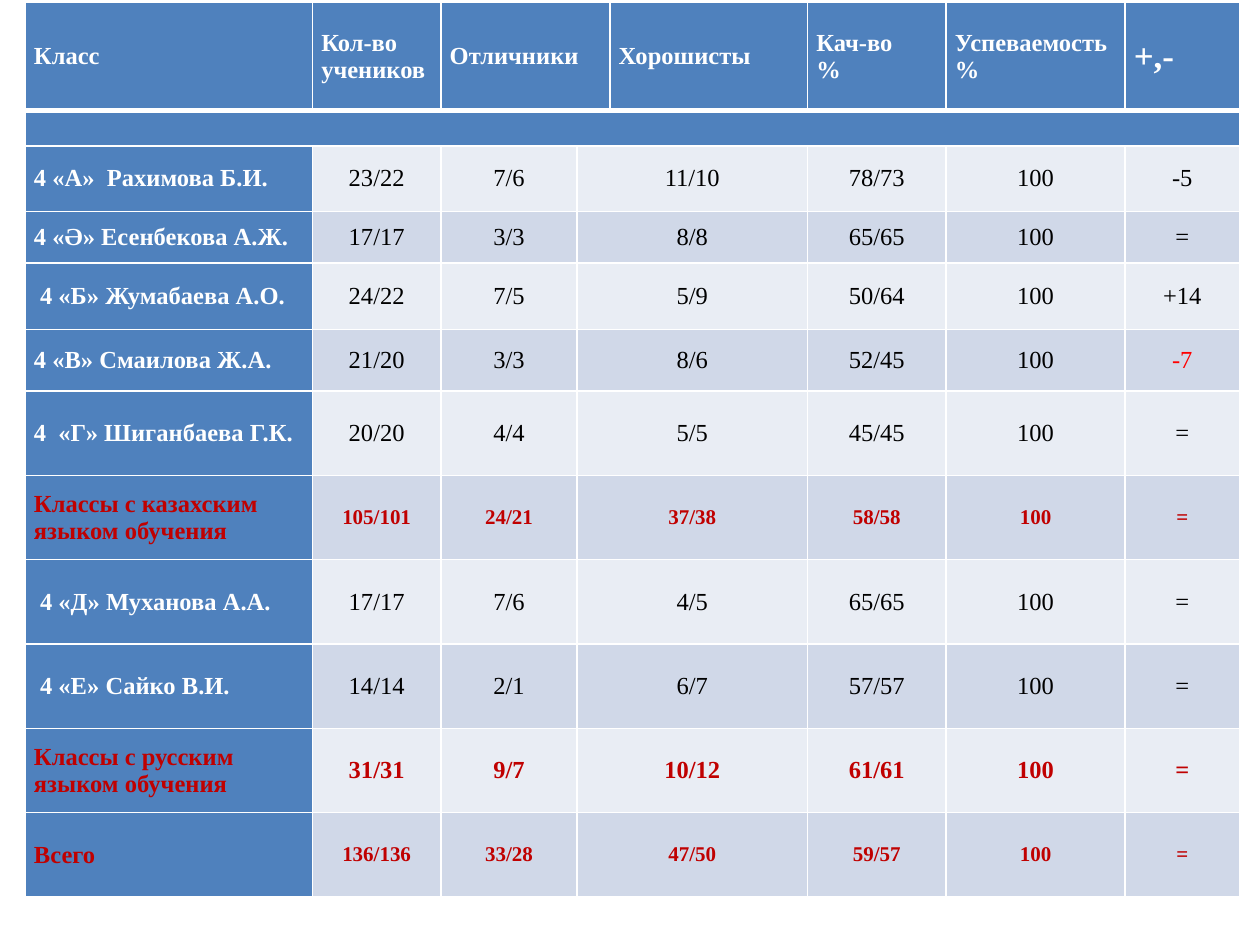
from lxml import etree
from pptx import Presentation
from pptx.dml.color import RGBColor
from pptx.enum.text import MSO_ANCHOR, PP_ALIGN
from pptx.oxml.ns import qn
from pptx.util import Inches, Pt

MIDDLE = MSO_ANCHOR.MIDDLE
LEFT, CENTER = PP_ALIGN.LEFT, PP_ALIGN.CENTER
WHITE = RGBColor(0xFF, 0xFF, 0xFF)
BLACK = RGBColor(0, 0, 0)
BLUE = RGBColor(0x4F, 0x81, 0xBD)
LIGHT = RGBColor(0xE9, 0xED, 0xF4)
DARK = RGBColor(0xD0, 0xD8, 0xE8)
CRIMSON = RGBColor(0xC0, 0, 0)
RED = RGBColor(0xFF, 0, 0)
FONT = "Times New Roman"

COLS = [2.28, 1.02, 1.08, 0.26, 1.57, 1.1, 1.42, 0.91]
ROWS = [0.86, 0.28, 0.52, 0.41, 0.53, 0.49] + [0.67] * 6
HEAD = ["Класс", "Кол-во учеников", "Отличники", "Хорошисты",
        "Кач-во\n%", "Успеваемость\n%", "+,-"]
HEAD_AT = [0, 1, 2, 4, 5, 6, 7]
BODY_AT = [0, 1, 2, 3, 5, 6, 7]
BODY = [
    ["4 «А»  Рахимова Б.И.", "23/22", "7/6", "11/10", "78/73", "100", "-5"],
    ["4 «Ә» Есенбекова А.Ж.", "17/17", "3/3", "8/8", "65/65", "100", "="],
    [" 4 «Б» Жумабаева А.О.", "24/22", "7/5", "5/9", "50/64", "100", "+14"],
    ["4 «В» Смаилова Ж.А.", "21/20", "3/3", "8/6", "52/45", "100", "-7"],
    ["4  «Г» Шиганбаева Г.К.", "20/20", "4/4", "5/5", "45/45", "100", "="],
    ["Классы с казахским языком обучения", "105/101", "24/21", "37/38",
     "58/58", "100", "="],
    [" 4 «Д» Муханова А.А.", "17/17", "7/6", "4/5", "65/65", "100", "="],
    [" 4 «Е» Сайко В.И.", "14/14", "2/1", "6/7", "57/57", "100", "="],
    ["Классы с русским языком обучения", "31/31", "9/7", "10/12",
     "61/61", "100", "="],
    ["Всего", "136/136", "33/28", "47/50", "59/57", "100", "="],
]
TOTALS = {5: 12, 8: 14, 9: 12}


def add_edge(cell, side, width):
    line = etree.SubElement(cell._tc.get_or_add_tcPr(), qn("a:ln" + side),
                            w=str(Pt(width)))
    fill = etree.SubElement(line, qn("a:solidFill"))
    etree.SubElement(fill, qn("a:srgbClr"), val=str(WHITE))


def style_cell(cell, row, col):
    for side in "LRTB":
        thick = (row, side) in ((0, "B"), (1, "T"))
        add_edge(cell, side, 3 if thick else 1)
    cell.fill.solid()
    band = DARK if row % 2 else LIGHT
    cell.fill.fore_color.rgb = BLUE if row < 2 or col == 0 else band
    cell.vertical_anchor = MIDDLE
    cell.margin_left = cell.margin_right = Inches(0.07)
    cell.margin_top = cell.margin_bottom = 0


def write_cell(cell, text, size, color, bold, align=LEFT):
    cell.text = text
    for para in cell.text_frame.paragraphs:
        para.alignment = align
        font = para.font
        font.name, font.size, font.bold = FONT, Pt(size), bold
        font.color.rgb = color


def fill_head(table):
    for col, text in zip(HEAD_AT, HEAD):
        size = 20 if text == "+,-" else 14
        write_cell(table.cell(0, col), text, size, WHITE, True)
    write_cell(table.cell(1, 0), "", 14, WHITE, True)


def fill_body(table):
    for num, (label, *marks) in enumerate(BODY):
        row = num + 2
        total = num in TOTALS
        write_cell(table.cell(row, 0), label, 14,
                   CRIMSON if total else WHITE, True)
        for col, text in zip(BODY_AT[1:], marks):
            color = CRIMSON if total else RED if text == "-7" else BLACK
            write_cell(table.cell(row, col), text, TOTALS.get(num, 14),
                       color, total, CENTER)


def add_grades(slide, left, top, width, height):
    table = slide.shapes.add_table(len(ROWS), len(COLS), left, top,
                                   width, height).table
    for col, size in zip(table.columns, COLS):
        col.width = int(width * size / sum(COLS))
    for row, size in zip(table.rows, ROWS):
        row.height = int(height * size / sum(ROWS))
    for row in range(len(ROWS)):
        for col in range(len(COLS)):
            style_cell(table.cell(row, col), row, col)
    table.cell(0, 2).merge(table.cell(0, 3))
    table.cell(1, 0).merge(table.cell(1, len(COLS) - 1))
    for row in range(2, len(ROWS)):
        table.cell(row, 3).merge(table.cell(row, 4))
    fill_head(table)
    fill_body(table)


def main():
    deck = Presentation()
    deck.slide_width, deck.slide_height = Inches(10), Inches(7.5)
    slide = deck.slides.add_slide(deck.slide_layouts[6])
    add_grades(slide, Inches(0.2), Inches(0.02), Inches(9.64), Inches(7.1))
    deck.save("out.pptx")


if __name__ == "__main__":
    main()
